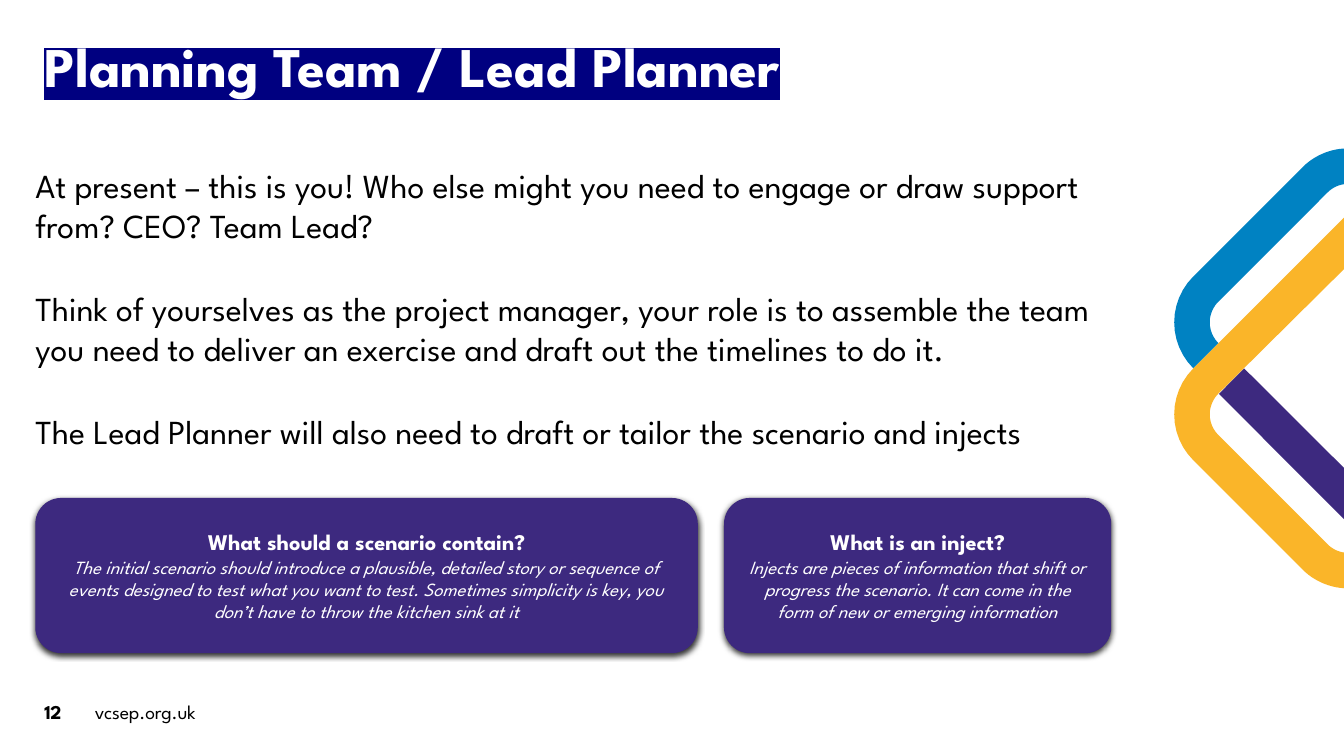
import math
from dataclasses import dataclass
from typing import NamedTuple

import lxml.etree
import pptx
import pptx.dml.color
import pptx.enum.shapes
import pptx.enum.text
import pptx.oxml.ns
import pptx.util

qn = pptx.oxml.ns.qn
Align = pptx.enum.text.PP_ALIGN
Anchor = pptx.enum.text.MSO_ANCHOR
Point = tuple[float, float]

WIDE = pptx.util.Inches(13.33)
HIGH = pptx.util.Inches(7.5)
EDGE = 100 * WIDE / HIGH


@dataclass(frozen=True)
class Theme:
    font: str = "League Spartan"
    white: str = "FFFFFF"
    black: str = "000000"
    navy: str = "000080"
    purple: str = "3D297F"
    yellow: str = "FAB529"
    blue: str = "0082C2"
    title: float = 40
    body: float = 24
    head: float = 16
    foot: float = 14
    note: float = 13.3


THEME = Theme()


class Box(NamedTuple):
    """Percent of the slide's width and height."""
    left: float
    top: float
    width: float
    height: float

    def spots(self) -> list[int]:
        return [round(share * side / 100)
                for share, side in zip(self, (WIDE, HIGH, WIDE, HIGH))]


@dataclass(frozen=True)
class Card:
    width: float
    head: str
    note: str


@dataclass(frozen=True)
class Label:
    box: Box
    text: str
    bold: bool
    track: int


CARDS = (
    Card(49.29, "What should a scenario contain?",
         "The initial scenario should introduce a plausible, detailed story or "
         "sequence of events designed to test what you want to test. Sometimes "
         "simplicity is key, you don’t have to throw the kitchen sink at it"),
    Card(28.81, "What is an inject?",
         "Injects are pieces of information that shift or progress the "
         "scenario. It can come in the form of new or emerging information"),
)
LABELS = (
    Label(Box(3.3, 92.27, 1.88, 3.33), "12", True, -20),
    Label(Box(7.05, 92.27, 9.3, 3.47), "vcsep.org.uk", False, -10),
)
BODY = (
    "At present – this is you! Who else might you need to engage or draw "
    "support from? CEO? Team Lead?",
    "Think of yourselves as the project manager, your role is to assemble the "
    "team you need to deliver an exercise and draft out the timelines to do it.",
    "The Lead Planner will also need to draft or tailor the scenario and injects",
)


def tint(code: str) -> pptx.dml.color.RGBColor:
    return pptx.dml.color.RGBColor.from_string(code)


def setup(frame, side: float = 0, top: float = 0.7, anchor=Anchor.TOP) -> None:
    frame.word_wrap = True
    frame.auto_size = pptx.enum.text.MSO_AUTO_SIZE.NONE
    frame.vertical_anchor = anchor
    frame.margin_left = frame.margin_right = pptx.util.Pt(side)
    frame.margin_top = frame.margin_bottom = pptx.util.Pt(top)


def write(frame, text: str, *, size: float, color: str = THEME.black,
          bold: bool = False, slant: bool = False, align=Align.LEFT,
          gap: float = 0, track: int = 0, mark: str = "") -> None:
    first = not frame.text
    para = frame.paragraphs[0] if first else frame.add_paragraph()
    props = para._p.get_or_add_pPr()
    props.set("marL", "0")
    props.set("indent", "0")
    lxml.etree.SubElement(props, qn("a:buNone"))
    para.alignment = align
    para.space_before = pptx.util.Pt(0 if first else gap)
    run = para.add_run()
    run.text = text
    font = run.font
    font.name, font.size = THEME.font, pptx.util.Pt(size)
    font.bold, font.italic = bold, slant
    font.color.rgb = tint(color)
    style = run._r.get_or_add_rPr()
    if track:
        style.set("spc", str(track))
    if mark:
        light = lxml.etree.Element(qn("a:highlight"))
        lxml.etree.SubElement(light, qn("a:srgbClr"), val=mark)
        style.find(qn("a:solidFill")).addnext(light)


def paint(shape, color: str) -> None:
    shape.shadow.inherit = False
    shape.fill.solid()
    shape.fill.fore_color.rgb = tint(color)
    shape.line.fill.background()


def shade(shape) -> None:
    glow = lxml.etree.SubElement(
        shape._element.spPr.find(qn("a:effectLst")), qn("a:outerShdw"),
        blurRad="57150", dist="19050", dir="5400000", algn="t", rotWithShape="0")
    hue = lxml.etree.SubElement(glow, qn("a:srgbClr"), val=THEME.black)
    lxml.etree.SubElement(hue, qn("a:alpha"), val="80000")


def arc(hub: Point, size: float, start: float, end: float) -> list[Point]:
    turns = [math.radians(start + (end - start) * step / 12) for step in range(13)]
    return [(hub[0] + size * math.cos(turn), hub[1] + size * math.sin(turn))
            for turn in turns]


def draw(group, dots: list[Point], color: str) -> None:
    spots = [(round(x * HIGH / 100), round(y * HIGH / 100)) for x, y in dots]
    form = group.shapes.build_freeform(*spots[0], scale=1.0)
    form.add_line_segments(spots[1:], close=True)
    paint(form.convert_to_shape(), color)


def draw_bands(slide) -> None:
    mid, outer, inner = 48.73, 8.57, 3.87
    near, far = (163.85, 42.65), (178.3, 28.2)
    low, base = [(x, 2 * mid - y) for x, y in (near, far)]
    lean = {size: math.degrees(math.asin((far[0] - EDGE) / size))
            for size in (outer, inner)}
    group = slide.shapes.add_group_shape()
    draw(group, arc(base, outer, 90 + lean[outer], 135)
         + arc(low, outer, 135, 225)
         + [(EDGE, 28.8), (EDGE, 35.6)]
         + arc(low, inner, 225, 135)
         + arc(base, inner, 135, 90 + lean[inner]), THEME.yellow)
    draw(group, [(164.53, mid), (161.2, 52.1), (EDGE, 68.67), (EDGE, 61.9)],
         THEME.purple)
    draw(group, arc(far, outer, 270 - lean[outer], 225)
         + arc(near, outer, 225, 135)
         + arc(near, inner, 135, 225)
         + arc(far, inner, 225, 270 - lean[inner]), THEME.blue)


def place(shape, box: Box) -> None:
    shape.left, shape.top, shape.width, shape.height = box.spots()


def draw_cards(slide) -> None:
    left = 2.63
    for card in CARDS:
        box = Box(left, 65.87, card.width, 20.53)
        shape = slide.shapes.add_shape(
            pptx.enum.shapes.MSO_SHAPE.ROUNDED_RECTANGLE, *box.spots())
        paint(shape, THEME.purple)
        shade(shape)
        frame = shape.text_frame
        setup(frame, 9.5, 9.5, Anchor.MIDDLE)
        write(frame, card.head, size=THEME.head, color=THEME.white, bold=True,
              align=Align.CENTER)
        write(frame, card.note, size=THEME.note, color=THEME.white, slant=True,
              align=Align.CENTER)
        left += card.width + 1.95


def main() -> None:
    deck = pptx.Presentation()
    deck.slide_width, deck.slide_height = WIDE, HIGH
    slide = deck.slides.add_slide(deck.slide_layouts[1])
    title, body = slide.placeholders
    place(title, Box(3.3, 4, 86.1, 9.2))
    setup(title.text_frame)
    write(title.text_frame, "Planning Team / Lead Planner", size=THEME.title,
          color=THEME.white, bold=True, mark=THEME.navy)
    draw_bands(slide)
    place(body, Box(2.63, 21.47, 81.77, 38.67))
    setup(body.text_frame, top=1.7)
    for text in BODY:
        write(body.text_frame, text, size=THEME.body, gap=30.5)
    for label in LABELS:
        frame = slide.shapes.add_textbox(*label.box.spots()).text_frame
        setup(frame, top=1.5)
        write(frame, label.text, size=THEME.foot, bold=label.bold,
              track=label.track)
    draw_cards(slide)
    deck.save("out.pptx")


if __name__ == "__main__":
    main()
